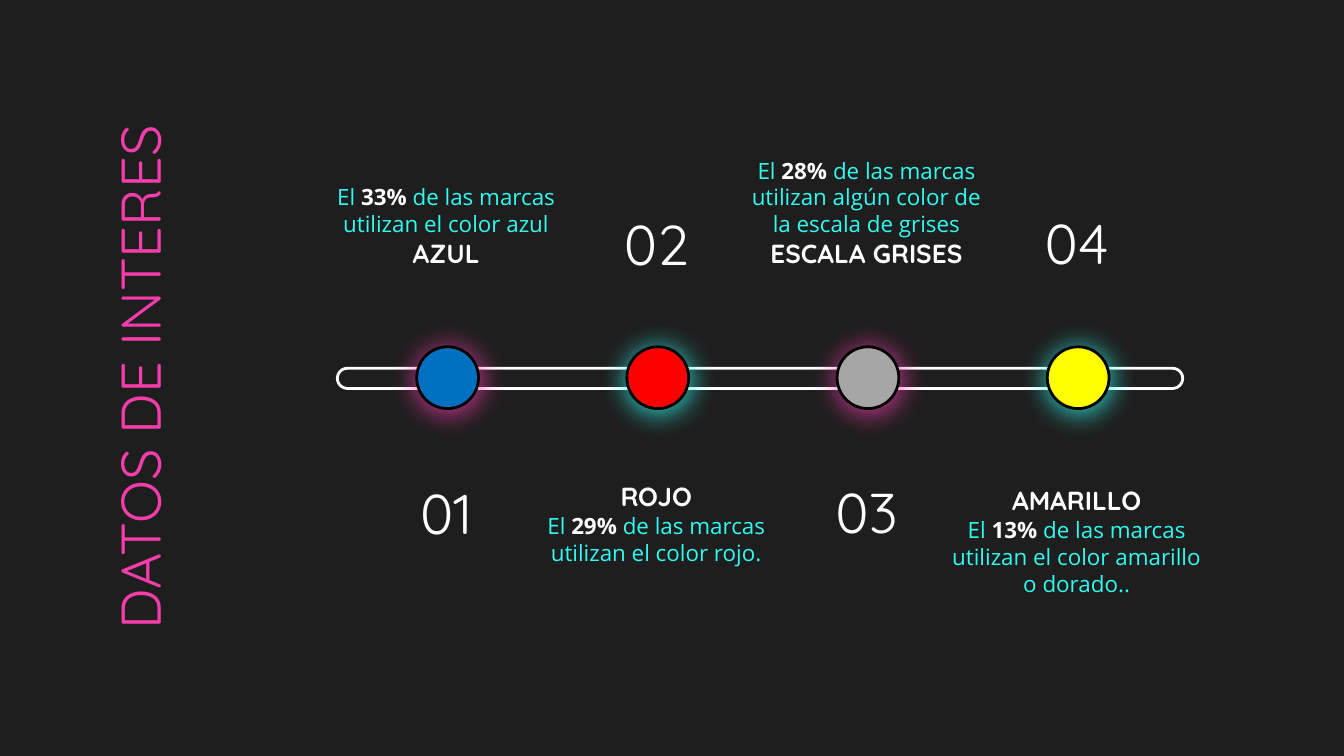
from lxml.etree import SubElement
from pptx import Presentation
from pptx.dml.color import RGBColor
from pptx.enum.shapes import MSO_SHAPE as Shape
from pptx.enum.text import MSO_ANCHOR as Anchor, PP_ALIGN as Align
from pptx.oxml.ns import qn
from pptx.util import Pt

WHITE, PINK, CYAN = "FFFFFF", "F73CAB", "30FCF1"
TITLE_FONT, BODY_FONT = "Quicksand", "Open Sans"
FIRST_CENTER, COLUMN_STEP = 239, 112.6
BOX_WIDTH, BOX_HEIGHT = 149.8, 45.4
DOT_SIZE = 33.1

# dot colour, glow, number, number top, caption top, heading, share, rest, heading last
STEPS = [
    ("0070C0", PINK, "01", 249, 105.8, "AZUL", "33%",
     " de las marcas utilizan el color azul", True),
    ("FF0000", CYAN, "02", 105, 265, "ROJO", "29%",
     " de las marcas utilizan el color rojo.", False),
    ("A6A6A6", PINK, "03", 248.4, 105.8, "ESCALA GRISES", "28%",
     " de las marcas utilizan algún color de la escala de grises", True),
    ("FFFF00", CYAN, "04", 104.4, 281.5, "AMARILLO", "13%",
     " de las marcas utilizan el color amarillo o dorado..", False),
]


def color(value):
    return RGBColor.from_string(value)


def add_text(page, left, top, width, height, lines, anchor):
    """Each line is a list of (text, size, font, colour, bold) spans."""
    box = page.shapes.add_textbox(Pt(left), Pt(top), Pt(width), Pt(height))
    frame = box.text_frame
    frame.word_wrap = True
    frame.vertical_anchor = anchor
    frame.margin_left = frame.margin_right = Pt(7.2)
    frame.margin_top = frame.margin_bottom = Pt(7.2)
    for index, spans in enumerate(lines):
        para = frame.add_paragraph() if index else frame.paragraphs[0]
        para.alignment = Align.CENTER
        for text, size, font, tint, bold in spans:
            span = para.add_run()
            span.text = text
            span.font.size = Pt(size)
            span.font.name = font
            span.font.color.rgb = color(tint)
            span.font.bold = bold
    return box


def add_outlined(page, kind, left, top, width, height, line, fill=None):
    shape = page.shapes.add_shape(kind, Pt(left), Pt(top), Pt(width), Pt(height))
    shape.shadow.inherit = False
    if fill:
        shape.fill.solid()
        shape.fill.fore_color.rgb = color(fill)
    else:
        shape.fill.background()
    shape.line.color.rgb = color(line)
    shape.line.width = Pt(1.5)
    return shape


def add_glow(shape, tint):
    """Give the shape a wide, soft coloured shadow."""
    effects = shape._element.spPr.find(qn("a:effectLst"))
    shadow = SubElement(effects, qn("a:outerShdw"), blurRad=str(Pt(15.8)),
                        dist=str(Pt(1.5)), dir=str(72 * 60000),
                        algn="bl", rotWithShape="0")
    tone = SubElement(shadow, qn("a:srgbClr"), val=tint)
    SubElement(tone, qn("a:alpha"), val="88000")


def add_step(page, column, step):
    fill, glow, number, number_top, caption_top, heading, share, rest, heading_last = step
    center = FIRST_CENTER + column * COLUMN_STEP
    left = center - BOX_WIDTH / 2
    dot = add_outlined(page, Shape.OVAL, center + 0.8 - DOT_SIZE / 2, 185.8,
                       DOT_SIZE, DOT_SIZE, "000000", fill)
    add_glow(dot, glow)
    add_text(page, left, number_top, BOX_WIDTH, BOX_HEIGHT,
             [[(number, 30, TITLE_FONT, WHITE, False)]], Anchor.TOP)
    lines = [
        [(heading, 14, TITLE_FONT, WHITE, True)],
        [("El ", 12, BODY_FONT, CYAN, False),
         (share, 12, BODY_FONT, WHITE, True),
         (rest, 12, BODY_FONT, CYAN, False)],
    ]
    if heading_last:
        lines.reverse()
    add_text(page, left, caption_top, BOX_WIDTH, BOX_HEIGHT, lines, Anchor.BOTTOM)


def main():
    deck = Presentation()
    deck.slide_width, deck.slide_height = Pt(720), Pt(405)
    page = deck.slides.add_slide(deck.slide_layouts[6])
    page.background.fill.solid()
    page.background.fill.fore_color.rgb = color("1E1E1E")

    track = add_outlined(page, Shape.ROUNDED_RECTANGLE, 180.7, 197.3, 452.9, 10.8, WHITE)
    track.adjustments[0] = 0.5
    for column, step in enumerate(STEPS):
        add_step(page, column, step)
    title = add_text(page, -69.8, 177.1, 288, 50.4,
                     [[("DATOS DE INTERES", 30, TITLE_FONT, PINK, False)]], Anchor.MIDDLE)
    title.rotation = 270
    deck.save("out.pptx")


if __name__ == "__main__":
    main()
